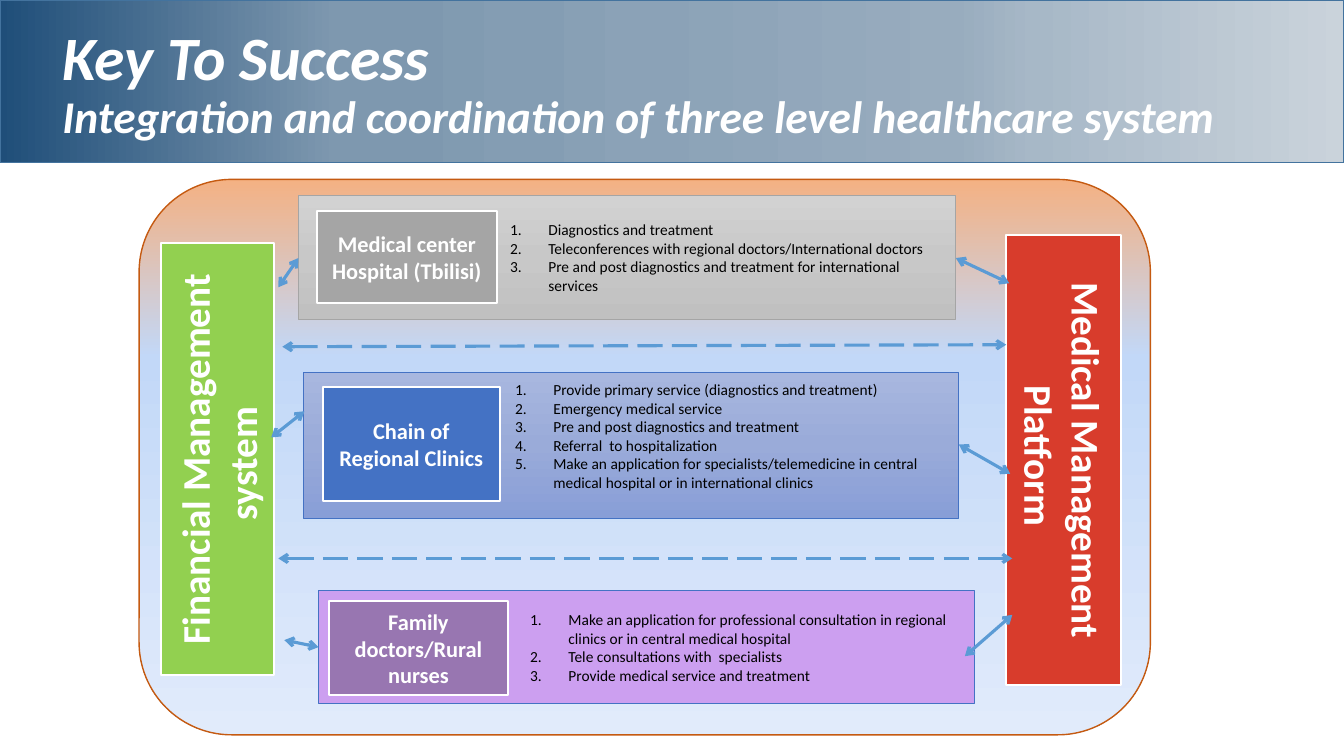
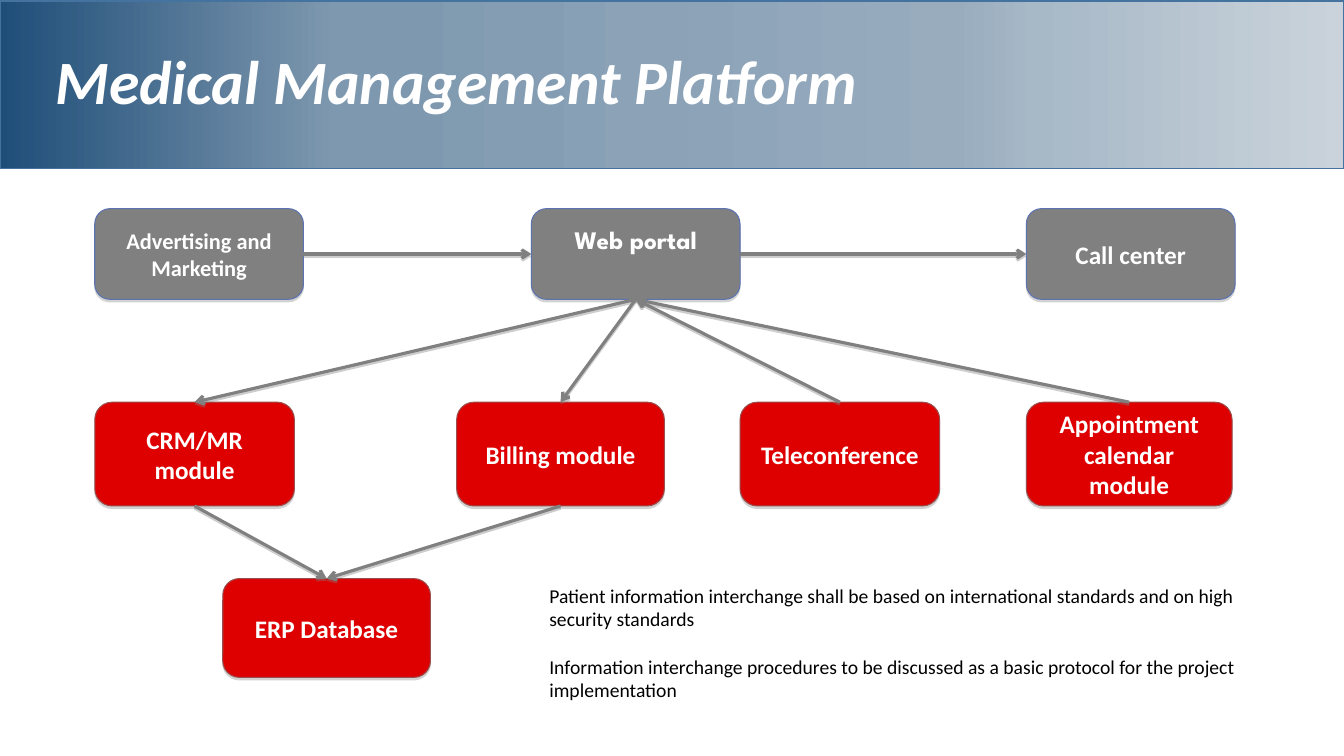
"""Build two slides on a three level healthcare system."""

import dataclasses
import typing

import lxml.etree
import pptx
import pptx.dml.color
import pptx.enum.dml
import pptx.enum.shapes
import pptx.enum.text
import pptx.oxml.ns
import pptx.util

SCALE = 9144
SHAPE = pptx.enum.shapes.MSO_SHAPE
ALIGN = pptx.enum.text.PP_ALIGN
ANCHOR = pptx.enum.text.MSO_ANCHOR
TOP, LEFT, BOTTOM, RIGHT = range(4)
Stops = tuple[tuple[int, str], ...]
Paint = str | Stops


@dataclasses.dataclass(frozen=True)
class Theme:
    """Colours, fonts and type sizes."""

    font: str = "Calibri"
    portal_font: str = "League Spartan"
    white: str = "FFFFFF"
    black: str = "000000"
    band: Stops = (
        (0, "1F4E79"), (25, "7E98AF"), (30, "7E98AF"), (39, "849DB3"),
        (48, "8BA2B7"), (71, "98ACBE"), (77, "A7B8C7"), (100, "CAD3DB"),
    )
    band_line: str = "43739E"
    frame: Stops = ((0, "F4B183"), (32, "C2D8F8"), (100, "E1EBFB"))
    frame_line: str = "C55A11"
    hospital: Stops = ((0, "D2D2D2"), (50, "C8C8C8"), (100, "C0C0C0"))
    hospital_label: str = "A5A5A5"
    clinics: Stops = ((0, "A8B7DF"), (50, "9AABD9"), (100, "889ED7"))
    clinics_label: str = "4472C4"
    family: str = "CC9FF0"
    family_label: str = "9876B1"
    finance: str = "92D050"
    platform: str = "D83C2C"
    arrow: str = "5B9BD5"
    grey: str = "808080"
    grey_line: str = "5C72B2"
    red: str = "DE0000"
    red_line: str = "9A4E4E"
    title: float = 44
    subtitle: float = 32.4
    pillar: float = 28
    module: float = 18
    label: float = 16
    body: float = 14
    listing: float = 11


THEME = Theme()


class Area(typing.NamedTuple):
    """A rectangle in px."""

    left: int
    top: int
    width: int
    height: int


class Level(typing.NamedTuple):
    """One care level: a card with a label and numbered duties."""

    card: Area
    paint: Paint
    line: str
    label_area: Area
    label_paint: str
    label: str
    duties: tuple[str, ...]
    bottom: int = 5


class Pillar(typing.NamedTuple):
    """A side bar with turned text."""

    area: Area
    paint: str
    turn: str
    text: str


class Arrow(typing.NamedTuple):
    """A double-headed arrow between two points."""

    start: tuple[int, int]
    end: tuple[int, int]
    dashed: bool = False


class Module(typing.NamedTuple):
    """A box of the platform diagram."""

    text: str
    area: Area
    paint: str
    line: str
    size: float = THEME.module
    font: str = THEME.font
    bottom: int = 5


class Link(typing.NamedTuple):
    """An arrow from one module's side to another's."""

    start: str
    start_side: int
    end: str
    end_side: int


LEVELS = (
    Level(Area(296, 194, 652, 123), THEME.hospital, THEME.hospital_label,
          Area(314, 209, 179, 92), THEME.hospital_label, "Medical center Hospital (Tbilisi)",
          ("Diagnostics and treatment",
           "Teleconferences with regional doctors/International doctors",
           "Pre and post diagnostics and treatment for international services")),
    Level(Area(301, 369, 650, 145), THEME.clinics, THEME.clinics_label,
          Area(320, 384, 176, 113), THEME.clinics_label, "Chain of Regional Clinics",
          ("Provide primary service (diagnostics and treatment)",
           "Emergency medical service",
           "Pre and post diagnostics and treatment",
           "Referral  to hospitalization",
           "Make an application for specialists/telemedicine in central medical hospital"
           " or in international clinics"), 23),
    Level(Area(316, 586, 650, 112), THEME.family, THEME.clinics_label,
          Area(326, 596, 178, 94), THEME.family_label, "Family doctors/Rural nurses",
          ("Make an application for professional consultation in regional clinics"
           " or in central medical hospital",
           "Tele consultations with  specialists",
           "Provide medical service and treatment")),
)
PILLARS = (
    Pillar(Area(160, 241, 112, 429), THEME.finance, "vert270", "Financial Management system "),
    Pillar(Area(998, 233, 114, 447), THEME.platform, "vert", "Medical Management Platform "),
)
ARROWS = (
    Arrow((302, 408), (269, 434)),
    Arrow((276, 285), (296, 256)),
    Arrow((948, 256), (1001, 281)),
    Arrow((951, 441), (1002, 470)),
    Arrow((280, 344), (998, 342), True),
    Arrow((276, 554), (1004, 554), True),
    Arrow((282, 635), (316, 642)),
    Arrow((1004, 610), (957, 651)),
)
GREY = (THEME.grey, THEME.grey_line)
RED = (THEME.red, THEME.red_line)
MODULES = (
    Module("Advertising and Marketing", Area(94, 207, 207, 90), *GREY, size=THEME.label),
    Module("Web portal", Area(527, 207, 207, 90), *GREY, font=THEME.portal_font, bottom=33),
    Module("Call center", Area(1018, 207, 207, 90), *GREY),
    Module("CRM/MR module", Area(94, 399, 198, 103), *RED),
    Module("Billing module", Area(453, 399, 206, 103), *RED),
    Module("Teleconference", Area(734, 399, 198, 103), *RED),
    Module("Appointment calendar module", Area(1018, 399, 204, 103), *RED),
    Module("ERP Database", Area(221, 574, 206, 98), *RED),
)
LINKS = (
    Link("Advertising and Marketing", RIGHT, "Web portal", LEFT),
    Link("Web portal", RIGHT, "Call center", LEFT),
    Link("Web portal", BOTTOM, "CRM/MR module", TOP),
    Link("Web portal", BOTTOM, "Billing module", TOP),
    Link("Teleconference", TOP, "Web portal", BOTTOM),
    Link("Appointment calendar module", TOP, "Web portal", BOTTOM),
    Link("CRM/MR module", BOTTOM, "ERP Database", TOP),
    Link("Billing module", BOTTOM, "ERP Database", TOP),
)
NOTES = (
    "Patient information interchange shall be based on international standards and on high"
    " security standards",
    "Information interchange procedures to be discussed as a basic protocol for the project"
    " implementation",
)


def emu(*lengths: int) -> list[int]:
    """Turn px into EMU."""
    return [length * SCALE for length in lengths]


def rgb(code: str) -> pptx.dml.color.RGBColor:
    """Read a hex colour."""
    return pptx.dml.color.RGBColor.from_string(code)


def child(parent: typing.Any, tag: str, **attributes: object) -> typing.Any:
    """Append a DrawingML element."""
    values = {name: str(value) for name, value in attributes.items()}
    return lxml.etree.SubElement(parent, pptx.oxml.ns.qn(f"a:{tag}"), values)


def fill_shape(shape: typing.Any, paint: Paint, angle: int) -> None:
    """Fill a shape with one colour or with gradient stops."""
    if isinstance(paint, str):
        shape.fill.solid()
        shape.fill.fore_color.rgb = rgb(paint)
        return
    shape.fill.gradient()
    shape.fill.gradient_angle = angle
    stops = next(shape._element.spPr.iter(pptx.oxml.ns.qn("a:gsLst")))
    for stop in list(stops):
        stops.remove(stop)
    for position, code in paint:
        child(child(stops, "gs", pos=position * 1000), "srgbClr", val=code)


def cast_shadow(effects: typing.Any, distance: float, opacity: int) -> None:
    """Add a hard grey shadow straight below."""
    shadow = child(effects, "outerShdw", blurRad=0, dist=int(pptx.util.Pt(distance)),
                   dir=5400000, rotWithShape=0)
    child(child(shadow, "srgbClr", val=THEME.grey), "alpha", val=opacity * 1000)


def add_box(page: typing.Any, area: Area, paint: Paint, line: str, *, weight: float = 1,
            kind: typing.Any = SHAPE.RECTANGLE, angle: int = 270, shadow: bool = False) -> typing.Any:
    """Draw a filled and outlined shape."""
    box = page.shapes.add_shape(kind, *emu(*area))
    box.shadow.inherit = False
    fill_shape(box, paint, angle)
    box.line.color.rgb = rgb(line)
    box.line.width = pptx.util.Pt(weight)
    if shadow:
        cast_shadow(box._element.spPr.find(pptx.oxml.ns.qn("a:effectLst")), 1.8, 35)
    return box


def write(box: typing.Any, *texts: str, size: float, color: str = THEME.white, bold: bool = False,
          italic: bool = False, font: str = THEME.font, align: typing.Any = ALIGN.CENTER,
          anchor: typing.Any = ANCHOR.MIDDLE, bottom: int = 5, gap: float = 0,
          spacing: float = 1, numbered: bool = False) -> typing.Any:
    """Write one paragraph per text and return the last."""
    frame = box.text_frame
    frame.word_wrap = True
    frame.vertical_anchor = anchor
    frame.margin_bottom = bottom * SCALE
    for index, text in enumerate(texts):
        para = frame.add_paragraph() if index else frame.paragraphs[0]
        para.alignment = align
        para.line_spacing = spacing
        para.space_before = pptx.util.Pt(gap if index else 0)
        if numbered:
            properties = para._p.get_or_add_pPr()
            properties.set("marL", str(238 * SCALE))
            properties.set("indent", str(-38 * SCALE))
            child(properties, "buAutoNum", type="arabicPeriod")
        add_span(para, text, size, color, bold, italic, font)
    return para


def add_span(para: typing.Any, text: str, size: float, color: str, bold: bool, italic: bool,
             font: str = THEME.font) -> None:
    """Add a formatted run to a paragraph."""
    span = para.add_run()
    span.text = text
    span.font.name = font
    span.font.size = pptx.util.Pt(size)
    span.font.bold = bold
    span.font.italic = italic
    span.font.color.rgb = rgb(color)


def add_arrow(page: typing.Any, color: str, start: tuple[int, int] = (0, 0),
              end: tuple[int, int] = (0, 0), *, dashed: bool = False, double: bool = False,
              shadow: bool = False) -> typing.Any:
    """Draw a straight arrow."""
    arrow = page.shapes.add_connector(pptx.enum.shapes.MSO_CONNECTOR.STRAIGHT, *emu(*start, *end))
    arrow.line.color.rgb = rgb(color)
    arrow.line.width = pptx.util.Pt(2.25)
    if dashed:
        arrow.line.dash_style = pptx.enum.dml.MSO_LINE.LONG_DASH
    for tag in ("headEnd", "tailEnd") if double else ("tailEnd",):
        child(arrow.line._get_or_add_ln(), tag, type="arrow")
    effects = child(arrow._element.spPr, "effectLst")
    if shadow:
        cast_shadow(effects, 1.6, 38)
    return arrow


def add_page(deck: typing.Any, band: Area) -> typing.Any:
    """Add a blank page with the title band."""
    page = deck.slides.add_slide(deck.slide_layouts[6])
    add_box(page, band, THEME.band, THEME.band_line, angle=0)
    return page


def add_title(page: typing.Any, area: Area, title: str, subtitle: str = "") -> None:
    """Write the title and an optional second line."""
    para = write(page.shapes.add_textbox(*emu(*area)), title, size=THEME.title, bold=True,
                 italic=True, align=ALIGN.LEFT, spacing=0.9)
    if subtitle:
        para.add_line_break()
        add_span(para, subtitle, THEME.subtitle, THEME.white, True, True)


def build_success(deck: typing.Any) -> None:
    """Build the page of care levels."""
    page = add_page(deck, Area(0, 0, 1333, 161))
    add_box(page, Area(138, 178, 1003, 551), THEME.frame, THEME.frame_line,
            kind=SHAPE.ROUNDED_RECTANGLE)
    add_title(page, Area(52, 25, 1224, 119), "Key To Success ",
              "Integration and coordination of three level healthcare system")
    for level in LEVELS:
        card = add_box(page, level.card, level.paint, level.line, weight=0.5)
        write(card, *level.duties, size=THEME.listing, color=THEME.black, align=ALIGN.LEFT,
              bottom=level.bottom, numbered=True)
        label = add_box(page, level.label_area, level.label_paint, THEME.white, weight=1.5)
        write(label, level.label, size=THEME.label, bold=True)
    for pillar in PILLARS:
        box = add_box(page, pillar.area, pillar.paint, THEME.white, weight=1.5)
        write(box, pillar.text, size=THEME.pillar, bold=True)
        box.text_frame._txBody.bodyPr.set("vert", pillar.turn)
    for arrow in ARROWS:
        add_arrow(page, THEME.arrow, arrow.start, arrow.end, dashed=arrow.dashed, double=True)


def build_platform(deck: typing.Any) -> None:
    """Build the page of platform modules."""
    page = add_page(deck, Area(0, 1, 1333, 166))
    add_title(page, Area(45, 24, 1234, 120), "Medical Management Platform")
    boxes = {}
    for module in MODULES:
        box = add_box(page, module.area, module.paint, module.line, weight=0.75,
                      kind=SHAPE.ROUNDED_RECTANGLE, shadow=True)
        write(box, module.text, size=module.size, bold=True, font=module.font,
              bottom=module.bottom)
        boxes[module.text] = box
    for link in LINKS:
        arrow = add_arrow(page, THEME.grey, shadow=True)
        arrow.begin_connect(boxes[link.start], link.start_side)
        arrow.end_connect(boxes[link.end], link.end_side)
    write(page.shapes.add_textbox(*emu(535, 574, 754, 128)), *NOTES, size=THEME.body,
          color=THEME.black, align=ALIGN.LEFT, anchor=ANCHOR.TOP, gap=17)


def main() -> None:
    """Build and save the deck."""
    deck = pptx.Presentation()
    deck.slide_width, deck.slide_height = emu(1333, 750)
    build_success(deck)
    build_platform(deck)
    deck.save("out.pptx")


if __name__ == "__main__":
    main()
